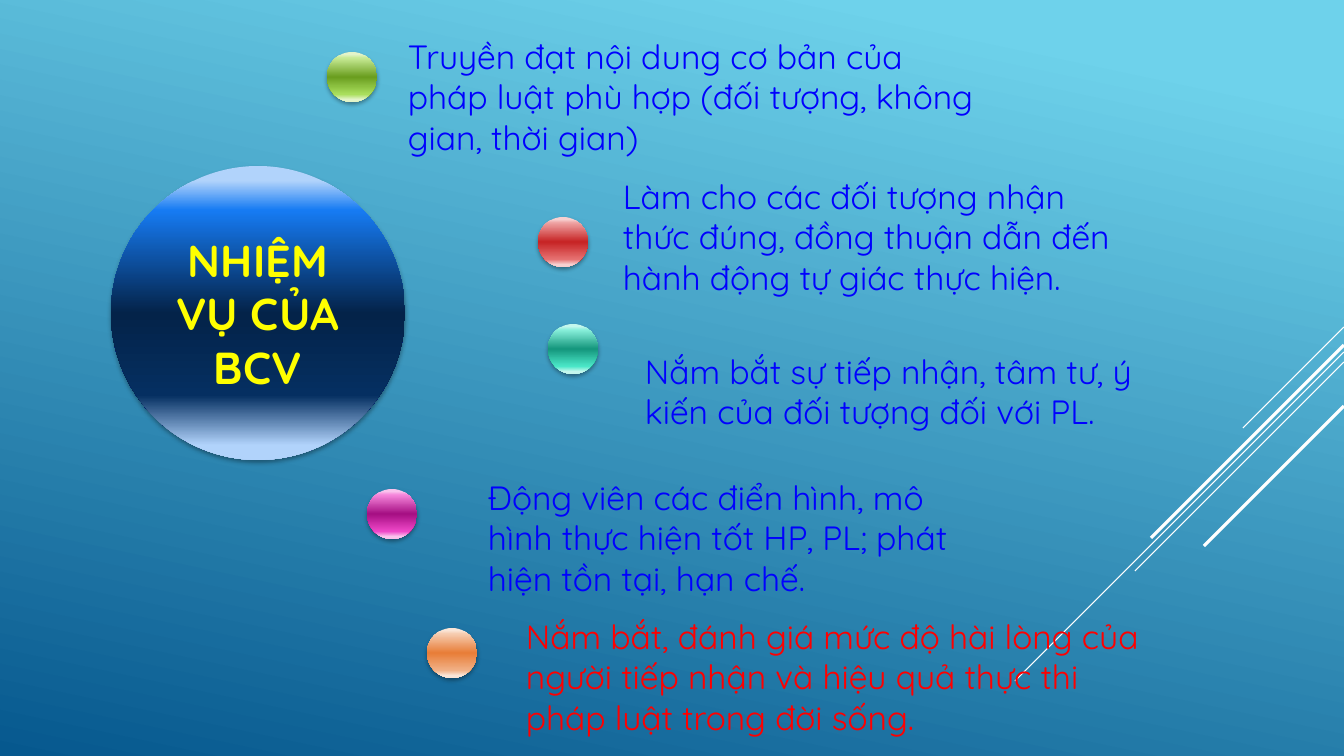
from dataclasses import dataclass

from lxml import etree
from pptx import Presentation
from pptx.dml.color import RGBColor
from pptx.enum.shapes import MSO_CONNECTOR, MSO_SHAPE
from pptx.enum.text import MSO_ANCHOR, MSO_AUTO_SIZE, PP_ALIGN
from pptx.oxml.ns import qn
from pptx.util import Pt

STRAIGHT = MSO_CONNECTOR.STRAIGHT
OVAL = MSO_SHAPE.OVAL
MIDDLE = MSO_ANCHOR.MIDDLE
FIT_SHAPE = MSO_AUTO_SIZE.SHAPE_TO_FIT_TEXT
CENTER = PP_ALIGN.CENTER

PAGE_WIDTH, PAGE_HEIGHT = 1344, 756
EMU_PER_PX = 12192000 / PAGE_WIDTH
BALL_SIZE = 50


@dataclass(frozen=True)
class Theme:
    font: str = "Quicksand"
    title_size: int = 32
    body_size: int = 24
    title: str = "FFFF00"
    body: str = "0000FF"
    accent: str = "FF0000"
    streak: str = "FFFFFF"
    shadow: str = "000000"
    sky: tuple = ((10, "6ED2EB"), (100, "06588E"))
    hub: tuple = ((5, "B1D3FB"), (15, "167BF3"), (50, "042349"),
                  (78, "052F61"), (95, "B1D3FB"))
    green: tuple = ("E3F4C9", "C7EA94", "6A9E1F", "AADF5E")
    red: tuple = ("F7D0D0", "EEA1A1", "C62324", "E67272")
    teal: tuple = ("C3F7ED", "87EFDA", "14967C", "4BE7C8")
    magenta: tuple = ("FAC2ED", "F585DB", "A50E82", "EF48C9")
    orange: tuple = ("FAE5D7", "F6CBAF", "E87D37", "F1B187")


THEME = Theme()

TASKS = [
    ((327, 52), (398, 31, 587, 132), THEME.green, THEME.body,
     "Truyền đạt nội dung cơ bản của pháp luật phù hợp (đối tượng, không gian, thời gian)"),
    ((538, 217), (613, 171, 532, 132), THEME.red, THEME.body,
     "Làm cho các đối tượng nhận thức đúng, đồng thuận dẫn đến hành động tự giác thực hiện."),
    ((548, 324), (635, 346, 553, 92), THEME.teal, THEME.body,
     "Nắm bắt sự tiếp nhận, tâm tư, ý kiến của đối tượng đối với PL."),
    ((367, 489), (478, 472, 507, 132), THEME.magenta, THEME.body,
     "Động viên các điển hình, mô hình thực hiện tốt HP, PL; phát hiện tồn tại, hạn chế."),
    ((427, 628), (516, 611, 651, 132), THEME.orange, THEME.accent,
     "Nắm bắt, đánh giá mức độ hài lòng của người tiếp nhận và hiệu quả thực thi "
     "pháp luật trong đời sống."),
]

STREAKS = [(327, 101, 0.75), (352, 329, 0.75), (362, 209, 0.75),
           (345, 193, 2.25), (406, 140, 2.25)]


def px(*lengths):
    return [round(length * EMU_PER_PX) for length in lengths]


def add_color(parent, color):
    return etree.SubElement(parent, qn("a:srgbClr"), val=color)


def set_gradient(fill, element, stops, angle):
    fill.gradient()
    gradient = next(element.iter(qn("a:gradFill")))
    stop_list = gradient.find(qn("a:gsLst"))
    for stop in list(stop_list):
        stop_list.remove(stop)
    for position, color in stops:
        add_color(etree.SubElement(stop_list, qn("a:gs"), pos=str(position * 1000)), color)
    direction = gradient.find(qn("a:lin"))
    direction.set("ang", str(angle * 60000))
    direction.set("scaled", "0")


def add_ball(page, box, stops):
    ball = page.shapes.add_shape(OVAL, *px(*box))
    ball.line.fill.background()
    ball.shadow.inherit = False
    set_gradient(ball.fill, ball._element, stops, 90)
    effects = ball._element.spPr.find(qn("a:effectLst"))
    shadow = etree.SubElement(effects, qn("a:outerShdw"), blurRad=str(Pt(3.1)),
                              dist=str(Pt(1.8)), dir="5400000", rotWithShape="0")
    etree.SubElement(add_color(shadow, THEME.shadow), qn("a:alpha"), val="35000")
    return ball


def write_text(frame, text, size, color, bold=False):
    frame.word_wrap = True
    para = frame.paragraphs[0]
    para.text = text
    para.font.name = THEME.font
    para.font.size = Pt(size)
    para.font.bold = bold
    para.font.color.rgb = RGBColor.from_string(color)
    return para


def add_streaks(page, right):
    for top, reach, width in STREAKS:
        streak = page.shapes.add_connector(
            STRAIGHT, *px(right, top, right - reach, top + reach))
        streak.line.color.rgb = RGBColor.from_string(THEME.streak)
        streak.line.width = Pt(width)
        etree.SubElement(streak._element.spPr, qn("a:effectLst"))


def add_hub(page, box, text):
    hub = add_ball(page, box, THEME.hub)
    hub.text_frame.vertical_anchor = MIDDLE
    para = write_text(hub.text_frame, text, THEME.title_size, THEME.title, bold=True)
    para.alignment = CENTER


def add_task(page, corner, box, shades, color, text):
    stops = zip((5, 12, 50, 85, 95), (*shades, shades[0]))
    add_ball(page, (*corner, BALL_SIZE, BALL_SIZE), stops)
    label = page.shapes.add_textbox(*px(*box))
    write_text(label.text_frame, text, THEME.body_size, color)
    label.text_frame.auto_size = FIT_SHAPE


def main():
    deck = Presentation()
    deck.slide_width, deck.slide_height = px(PAGE_WIDTH, PAGE_HEIGHT)
    page = deck.slides.add_slide(deck.slide_layouts[6])
    set_gradient(page.background.fill, page._element, THEME.sky, 102)
    add_streaks(page, PAGE_WIDTH)
    add_hub(page, (111, 166, 294, 294), "NHIỆM VỤ CỦA BCV")
    for task in TASKS:
        add_task(page, *task)
    deck.save("out.pptx")


if __name__ == "__main__":
    main()
